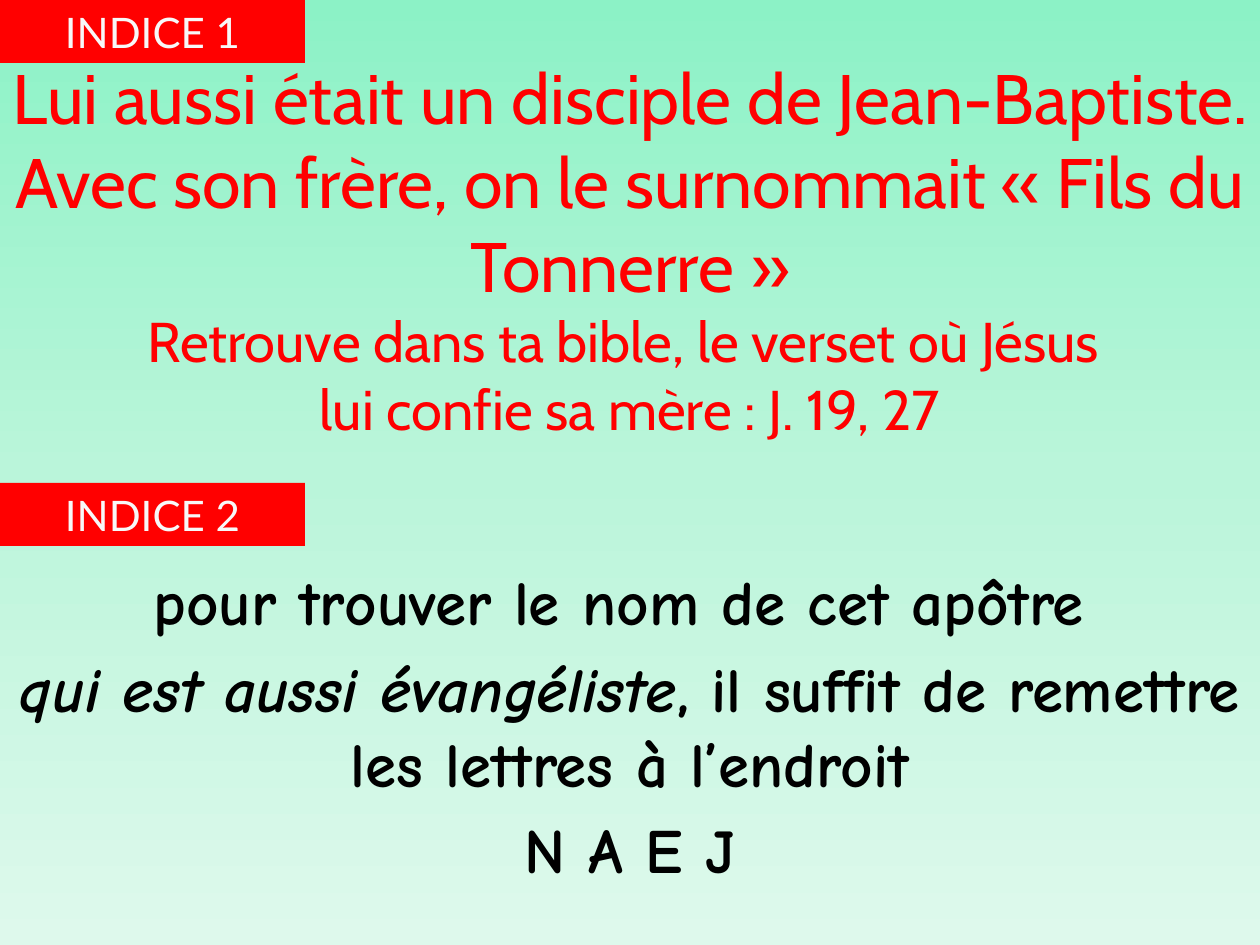
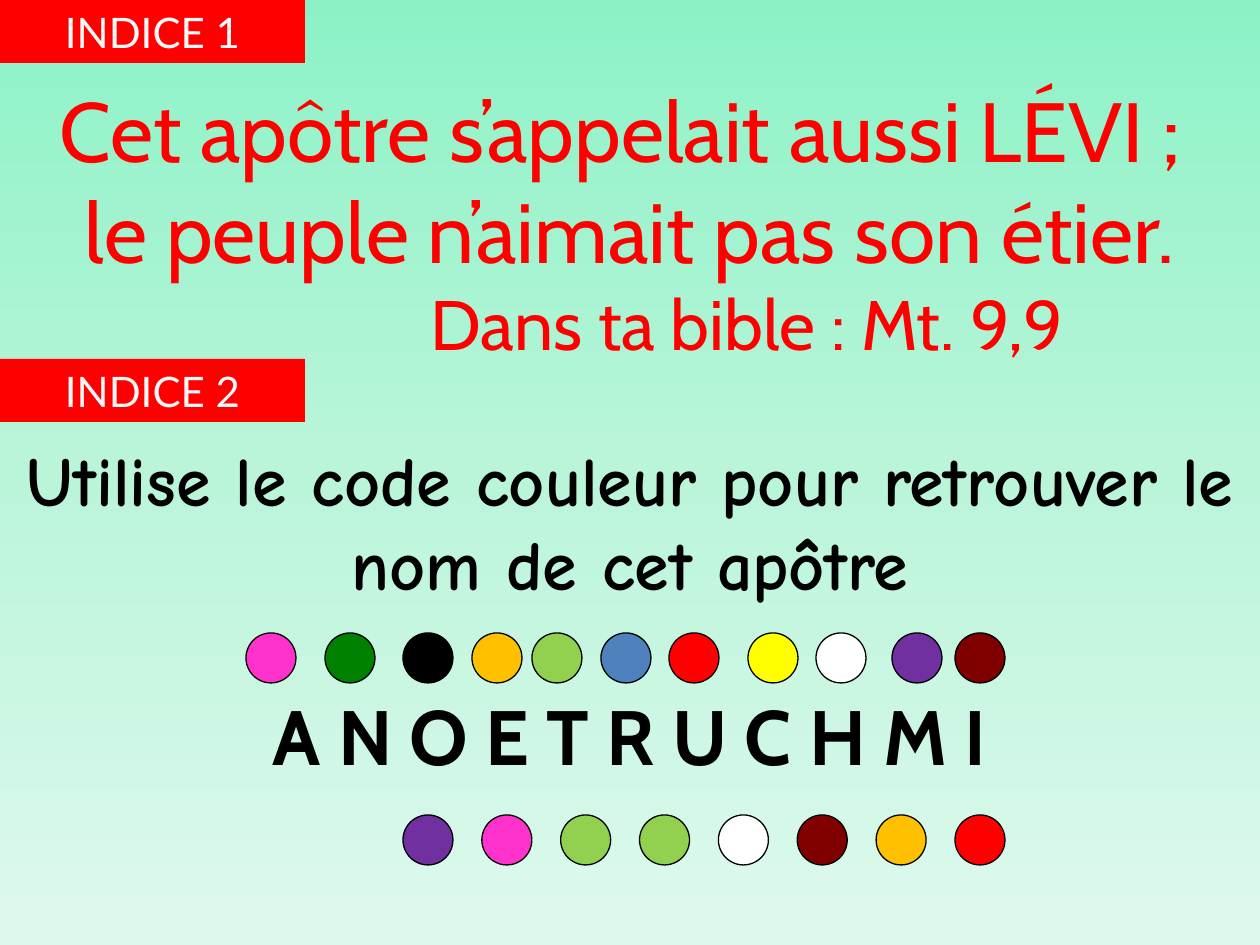
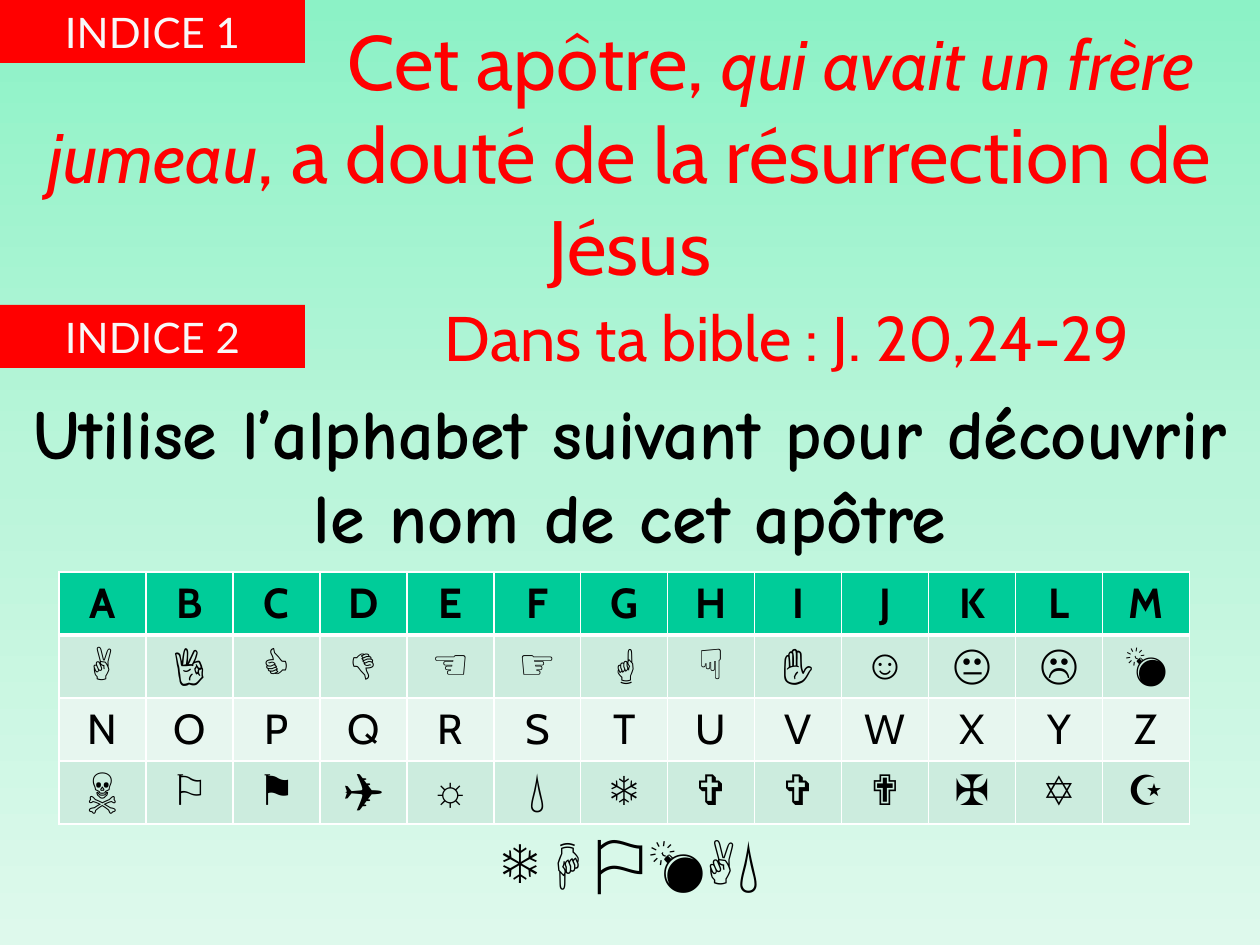
from copy import deepcopy

from lxml import etree
from pptx import Presentation
from pptx.dml.color import RGBColor
from pptx.enum.shapes import MSO_SHAPE
from pptx.enum.text import MSO_ANCHOR, PP_ALIGN
from pptx.oxml.ns import qn
from pptx.util import Pt

RECT, OVAL = MSO_SHAPE.RECTANGLE, MSO_SHAPE.OVAL
MIDDLE, CENTER = MSO_ANCHOR.MIDDLE, PP_ALIGN.CENTER

WIDE, HIGH = 1260, 945
RED, BLACK, WHITE = "FF0000", "000000", "FFFFFF"
PINK, GREEN, AMBER, LIME = "FF33CC", "008000", "FFC000", "92D050"
BLUE, YELLOW, PURPLE, MAROON = "4F81BD", "FFFF00", "7030A0", "800000"
BACK = [(0, "8CF2C6"), (0.5, "BAF5DA"), (1, "DEF9EC")]

CLUE = {"font": "Cabin", "color": RED}
TASK = {"font": "Comic Neue", "color": BLACK, "bold": True}

# A paragraph is (runs, format); a run is (words, format).
SLIDES = [
    {
        "second": 483,
        "clue": (49, 403, [
            ([("Lui aussi était un disciple de Jean-Baptiste. Avec son frère, "
               "on le surnommait «\u00a0Fils du Tonnerre\u00a0»", {})], {"size": 40}),
            ([("Retrouve dans ta bible, le verset où Jésus ", {})], {"size": 32}),
            ([("lui confie sa mère : J. 19, 27", {})], {"size": 32}),
        ]),
        "task": (557, 339, [
            ([("pour trouver le nom de cet apôtre ", {})], {"size": 36, "before": 6}),
            ([("qui est aussi évangéliste", {"italic": True}),
              (", il suffit de remettre les lettres à l’endroit", {})],
             {"size": 36, "before": 6}),
            ([("N A E J", {})], {"size": 36, "before": 6}),
        ]),
    },
    {
        "second": 359,
        "clue": (73, 301, [
            ([("Cet apôtre s’appelait aussi LÉVI ; ", {})], {"size": 48}),
            ([("le peuple n’aimait pas son étier.", {})], {"size": 48}),
            ([("Dans ta bible : Mt. 9,9", {})], {"size": 40, "left": 234}),
        ]),
        "task": (431, 380, [
            ([("Utilise le code couleur pour retrouver le nom de cet apôtre", {})],
             {"size": 40}),
            ([("A N O E T R U C H M I", {"font": "Cabin"})],
             {"size": 44, "before": 48}),
        ]),
    },
    {
        "second": 305,
        "clue": (0, 386, [
            ([("Cet apôtre, ", {}),
              ("qui avait un frère jumeau", {"size": 40, "italic": True}),
              (", a douté de la résurrection de Jésus", {})],
             {"size": 44, "first": 282}),
            ([("Dans ta bible : J. 20,24-29", {})],
             {"size": 36, "left": 314, "before": 4}),
        ]),
        "inset": 14,
        "task": (384, 548, [
            ([("Utilise l’alphabet suivant pour découvrir le nom de cet apôtre", {})],
             {"size": 40}),
            ([("❄☟⚐💣✌💧", {"font": "Arial"})], {"size": 32, "before": 154}),
        ]),
    },
]

DOT = 50
KEY_Y, CODE_Y = 633, 815
KEY = [(246, PINK), (325, GREEN), (403, BLACK), (472, AMBER), (532, LIME),
       (601, BLUE), (669, RED), (748, YELLOW), (816, WHITE), (892, PURPLE),
       (955, MAROON)]
CODE = [PURPLE, PINK, LIME, LIME, WHITE, MAROON, AMBER, RED]
CODE_X, CODE_END = 403, 955

GRID = (59, 572)
COL, ROW = 87, 63
ROWS = [  # letters or signs, fill, font, bold
    ("ABCDEFGHIJKLM", "00CC99", "Cabin", True),
    ("✌👌👍👎☜☞☝☟✋☺😐☹💣", "CCECDE", "Arial", False),
    ("NOPQRSTUVWXYZ", "E7F6EF", "Cabin", False),
    ("☠⚐⚑✈☼💧❄✞✞✟✠✡☪", "CCECDE", "Arial", False),
]


def px(n):
    return round(n * 914400 / 126)


def rgb(code):
    return RGBColor.from_string(code)


def write(par, words, size, font, color, bold=False, italic=False):
    par.alignment = CENTER
    run = par.add_run()
    run.text = words
    face = run.font
    face.size, face.name, face.bold, face.italic = Pt(size), font, bold, italic
    face.color.rgb = rgb(color)


def add_text(slide, top, high, pars, style, inset=6):
    """Add a text box as wide as the slide."""
    frame = slide.shapes.add_textbox(0, px(top), px(WIDE), px(high)).text_frame
    frame.word_wrap = True
    frame.margin_top = px(inset)
    for i, (runs, form) in enumerate(pars):
        form = dict(form)
        par = frame.add_paragraph() if i else frame.paragraphs[0]
        par.space_before = Pt(form.pop("before", 0))
        props = par._p.get_or_add_pPr()
        props.set("marL", str(px(form.pop("left", 0))))
        props.set("indent", str(px(form.pop("first", 0))))
        for words, extra in runs:
            write(par, words, **{**style, **form, **extra})


def add_shape(slide, kind, x, y, wide, high, fill, line=None):
    shape = slide.shapes.add_shape(kind, px(x), px(y), px(wide), px(high))
    shape.shadow.inherit = False
    shape.fill.solid()
    shape.fill.fore_color.rgb = rgb(fill)
    if line:
        shape.line.color.rgb = rgb(line)
        shape.line.width = Pt(0.75)
    else:
        shape.line.fill.background()
    return shape


def add_badge(slide, y, number):
    frame = add_shape(slide, RECT, 0, y, 305, 63, RED).text_frame
    frame.vertical_anchor = MIDDLE
    write(frame.paragraphs[0], f"INDICE {number}", 24, "Lato", "F8F8F8")


def add_dots(slide):
    step = (CODE_END - CODE_X) / (len(CODE) - 1)
    dots = [(x, KEY_Y, color) for x, color in KEY]
    dots += [(CODE_X + i * step, CODE_Y, color) for i, color in enumerate(CODE)]
    for x, y, color in dots:
        add_shape(slide, OVAL, x, y, DOT, DOT, color, BLACK)


def add_edges(cell, widths):
    """Draw white cell borders; widths maps a side (L, R, T, B) to points."""
    props = cell._tc.get_or_add_tcPr()
    for i, (side, width) in enumerate(widths.items()):
        edge = etree.Element(qn(f"a:ln{side}"), w=str(Pt(width)))
        fill = etree.SubElement(edge, qn("a:solidFill"))
        etree.SubElement(fill, qn("a:srgbClr"), val=WHITE)
        props.insert(i, edge)


def add_grid(slide):
    cols = len(ROWS[0][0])
    table = slide.shapes.add_table(len(ROWS), cols, px(GRID[0]), px(GRID[1]),
                                   px(COL * cols), px(ROW * len(ROWS))).table
    for col in table.columns:
        col.width = px(COL)
    for r, (signs, fill, font, bold) in enumerate(ROWS):
        table.rows[r].height = px(ROW)
        for c, sign in enumerate(signs):
            cell = table.cell(r, c)
            cell.fill.solid()
            cell.fill.fore_color.rgb = rgb(fill)
            write(cell.text_frame.paragraphs[0], sign, 24, font, BLACK, bold)
            add_edges(cell, {"L": 1, "R": 1, "T": 3 if r == 1 else 1,
                             "B": 3 if r == 0 else 1})


def set_back(master):
    fill = master.background.fill
    fill.gradient()
    fill.gradient_angle = 270
    stops = master.element.find(".//" + qn("p:bg")).find(".//" + qn("a:gsLst"))
    while len(stops) < len(BACK):
        stops.append(deepcopy(stops[-1]))
    for stop, (place, color) in zip(fill.gradient_stops, BACK):
        stop.position = place
        stop.color.rgb = rgb(color)


def main():
    prs = Presentation()
    prs.slide_width, prs.slide_height = px(WIDE), px(HIGH)
    set_back(prs.slide_master)
    extras = [None, add_dots, add_grid]
    for page, extra in zip(SLIDES, extras):
        slide = prs.slides.add_slide(prs.slide_layouts[6])
        add_text(slide, *page["clue"], CLUE, page.get("inset", 6))
        add_badge(slide, 0, 1)
        add_badge(slide, page["second"], 2)
        add_text(slide, *page["task"], TASK)
        if extra:
            extra(slide)
    prs.save("out.pptx")


if __name__ == "__main__":
    main()
